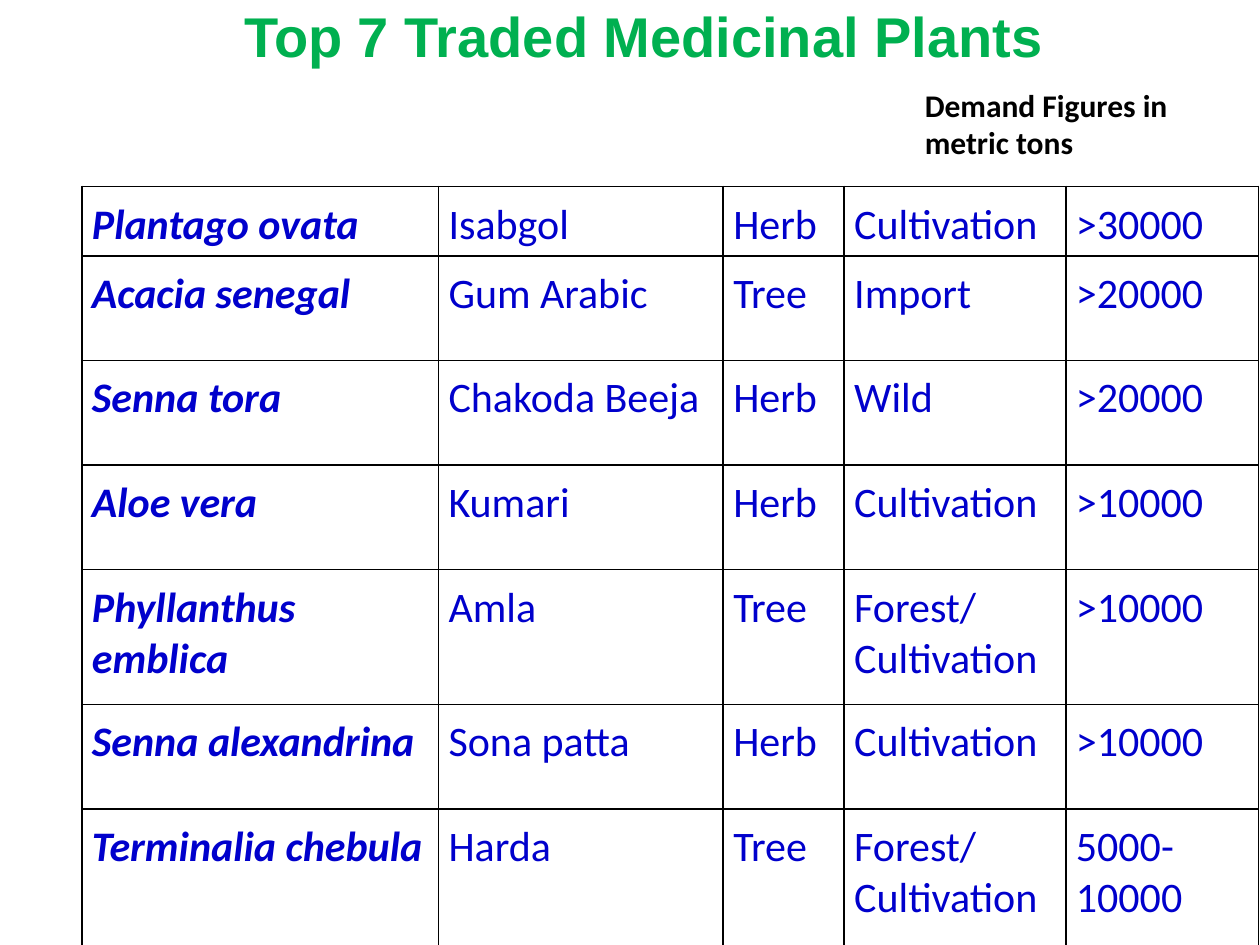
import pptx
import pptx.util
import pptx.dml.color
import pptx.enum.text
import pptx.oxml
import pptx.oxml.ns
from dataclasses import dataclass

Inches = pptx.util.Inches
Pt = pptx.util.Pt
Align = pptx.enum.text.PP_ALIGN
Anchor = pptx.enum.text.MSO_ANCHOR


@dataclass(frozen=True)
class Theme:
    green: str = "00B050"
    blue: str = "0000CC"
    black: str = "000000"
    head: str = "Arial"
    body: str = "Calibri"
    big: int = 32
    mid: int = 24
    small: int = 18
    lead: float = 36.5
    rule: int = 1
    pad: float = 0.08


class Page:
    def __init__(self, deck, theme):
        self.theme = theme
        self.slide = deck.slides.add_slide(deck.slide_layouts[6])

    def style(self, para, face, size, color, bold=False, italic=False):
        font = para.font
        font.name, font.size = face, Pt(size)
        font.bold, font.italic = bold, italic
        font.color.rgb = pptx.dml.color.RGBColor.from_string(color)

    def text(self, box, words, face, size, color, align=Align.LEFT, anchor=Anchor.TOP):
        frame = self.slide.shapes.add_textbox(*map(Inches, box)).text_frame
        frame.word_wrap = True
        frame.vertical_anchor = anchor
        frame.margin_left = Inches(0.01)
        frame.margin_right = frame.margin_bottom = 0
        frame.margin_top = Inches(0.01)
        para = frame.paragraphs[0]
        para.text = words
        para.alignment = align
        para.space_before = Pt(1)
        self.style(para, face, size, color, bold=True)

    def border(self, cell):
        props = cell._tc.get_or_add_tcPr()
        for side in "LRTB":
            props.append(pptx.oxml.parse_xml(
                f'<a:ln{side} {pptx.oxml.ns.nsdecls("a")} w="{Pt(self.theme.rule)}">'
                f'<a:solidFill><a:srgbClr val="{self.theme.black}"/></a:solidFill>'
                f'</a:ln{side}>'))

    def cell(self, cell, words, strong):
        look = self.theme
        self.border(cell)
        cell.fill.background()
        cell.margin_left = Inches(look.pad)
        cell.margin_right = cell.margin_top = cell.margin_bottom = 0
        cell.text = words
        paras = cell.text_frame.paragraphs
        paras[0].line_spacing = Pt(look.lead)
        for para in paras:
            self.style(para, look.body, look.mid, look.blue, strong, strong)

    def table(self, left, top, widths, heights, rows):
        box = map(Inches, (left, top, sum(widths), sum(heights)))
        grid = self.slide.shapes.add_table(len(rows), len(widths), *box).table
        grid.first_row = grid.horz_banding = False
        for col, width in zip(grid.columns, widths):
            col.width = Inches(width)
        for row, height, words in zip(grid.rows, heights, rows):
            row.height = Inches(height)
            for spot, (cell, word) in enumerate(zip(row.cells, words)):
                self.cell(cell, word, strong=spot == 0)


PLANTS = [
    ("Plantago ovata", "Isabgol", "Herb", "Cultivation", ">30000"),
    ("Acacia senegal", "Gum Arabic", "Tree", "Import", ">20000"),
    ("Senna tora", "Chakoda Beeja", "Herb", "Wild", ">20000"),
    ("Aloe vera", "Kumari", "Herb", "Cultivation", ">10000"),
    ("Phyllanthus\nemblica", "Amla", "Tree", "Forest/\nCultivation", ">10000"),
    ("Senna alexandrina", "Sona patta", "Herb", "Cultivation", ">10000"),
    ("Terminalia chebula", "Harda", "Tree", "Forest/\nCultivation", "5000-\n10000"),
]
WIDTHS = [2.83, 2.26, 0.96, 1.76, 1.53]
HEIGHTS = [0.55, 0.83, 0.83, 0.83, 1.07, 0.83, 1.1]


def main():
    deck = pptx.Presentation()
    deck.slide_width, deck.slide_height = Inches(10), Inches(7.5)
    look = Theme()
    page = Page(deck, look)
    page.text((1.83, 0, 6.55, 0.55), "Top 7 Traded Medicinal Plants",
              look.head, look.big, look.green, Align.CENTER, Anchor.MIDDLE)
    page.table(0.65, 1.48, WIDTHS, HEIGHTS, PLANTS)
    page.text((7.33, 0.67, 2.39, 0.62), "Demand Figures in metric tons",
              look.body, look.small, look.black)
    deck.save("out.pptx")


if __name__ == "__main__":
    main()
